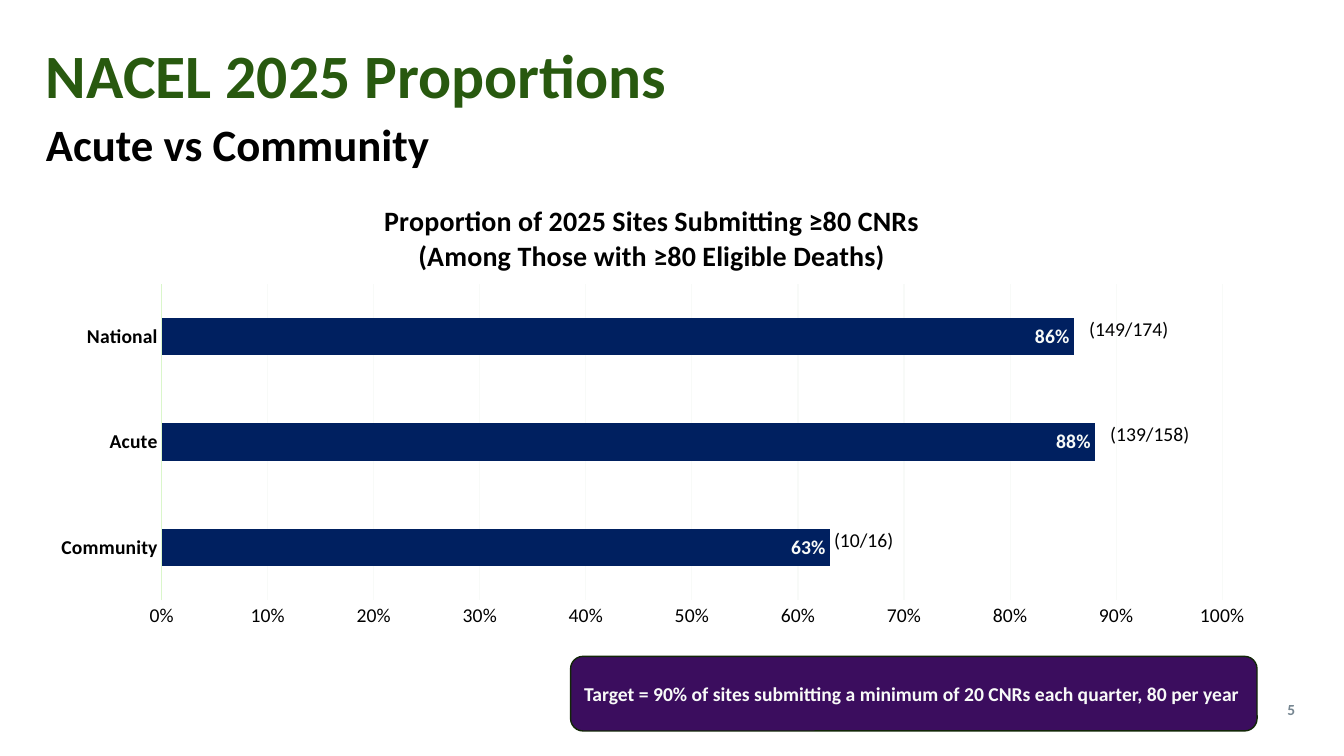
from lxml import etree
from pptx import Presentation
from pptx import util as u
from pptx.chart.data import CategoryChartData
from pptx.dml.color import RGBColor
from pptx.enum import chart as charts, shapes, text
from pptx.oxml.ns import qn

FONT = "Calibri"
COLOURS = {
    "green": "28590F",
    "black": "000000",
    "grey": "768691",
    "pale": "F8FAF8",
    "axis": "DAF6CB",
    "navy": "002060",
    "purple": "3B0D5E",
    "outline": "122707",
}
SITES = [
    ("National", 0.86, "(149/174)", 26.29),
    ("Acute", 0.88, "(139/158)", 26.82),
    ("Community", 0.63, "(10/16)", 19.86),
]


def colour(name):
    return RGBColor.from_string(COLOURS[name])


def set_font(font, size, color="black", bold=False):
    font.name = FONT
    font.size = u.Pt(size)
    font.bold = bold
    font.color.rgb = colour(color)


def write(frame, content, size, color="black", bold=False, align=text.PP_ALIGN.LEFT,
          anchor=text.MSO_ANCHOR.TOP, spacing=1.0, wrap=True):
    frame.word_wrap = wrap
    frame.vertical_anchor = anchor
    paragraph = frame.paragraphs[0]
    paragraph.alignment = align
    paragraph.line_spacing = spacing
    run = paragraph.add_run()
    run.text = content
    set_font(run.font, size, color, bold)


def add_text(slide, box, content, **style):
    shape = slide.shapes.add_textbox(*map(u.Cm, box))
    write(shape.text_frame, content, **style)


def add_heading(slide, box):
    left, top, width, height = box
    add_text(slide, (left, top, width, 2.46), "NACEL 2025 Proportions", size=44,
             color="green", bold=True, anchor=text.MSO_ANCHOR.MIDDLE, spacing=0.9)
    add_text(slide, (left, top + height - 1.32, width, 1.32), "Acute vs Community",
             size=32, bold=True, spacing=0.9)


def set_layout(element, position, **fractions):
    old = element.find(qn("c:layout"))
    if old is not None:
        element.remove(old)
    layout = etree.Element(qn("c:layout"))
    manual = etree.SubElement(layout, qn("c:manualLayout"))
    for tag, value in fractions.items():
        etree.SubElement(manual, qn("c:" + tag)).set("val", str(value))
    element.insert(position, layout)


def style_axis(axis, bold=False):
    axis.major_tick_mark = charts.XL_TICK_MARK.NONE
    axis.minor_tick_mark = charts.XL_TICK_MARK.NONE
    set_font(axis.tick_labels.font, 14, bold=bold)


def style_line(line, color):
    line.color.rgb = colour(color)
    line.width = u.Pt(0.75)


def add_title(chart):
    chart.has_title = True
    frame = chart.chart_title.text_frame
    frame.text = ("Proportion of 2025 Sites Submitting ≥80 CNRs\n"
                  "(Among Those with ≥80 Eligible Deaths)")
    for paragraph in frame.paragraphs:
        set_font(paragraph.runs[0].font, 20, bold=True)
    chart.chart_title.include_in_layout = False
    set_layout(chart.chart_title._element, 1, xMode="edge", yMode="edge", x=0.28, y=0.04)


def add_proportions(slide, box):
    data = CategoryChartData(number_format="0%")
    data.categories = [site[0] for site in reversed(SITES)]
    data.add_series("Series 1", [site[1] for site in reversed(SITES)])
    chart = slide.shapes.add_chart(charts.XL_CHART_TYPE.BAR_CLUSTERED,
                                   *map(u.Cm, box), data).chart
    set_font(chart.font, 10, "green")
    chart.has_legend = False
    add_title(chart)

    plot = chart.plots[0]
    plot.gap_width = 182
    plot.vary_by_categories = False
    series = plot.series[0]
    series.format.fill.solid()
    series.format.fill.fore_color.rgb = colour("navy")
    labels = series.data_labels
    labels.show_value = True
    labels.position = charts.XL_LABEL_POSITION.INSIDE_END
    labels.number_format = "0%"
    labels.number_format_is_linked = False
    set_font(labels.font, 14, "pale", bold=True)

    style_axis(chart.category_axis, bold=True)
    style_line(chart.category_axis.format.line, "axis")
    values = chart.value_axis
    style_axis(values)
    values.minimum_scale, values.maximum_scale, values.major_unit = 0, 1, 0.1
    values.tick_labels.number_format = "0%"
    values.tick_labels.number_format_is_linked = False
    values.format.line.fill.background()
    style_line(values.major_gridlines.format.line, "pale")
    plot_area = chart._chartSpace.chart.plotArea
    set_layout(plot_area, 0, layoutTarget="inner", xMode="edge", yMode="edge",
               x=0.102, y=0.225, w=0.861, h=0.692)

    left, top = box[:2]
    for row, (_, _, count, offset) in enumerate(SITES):
        add_text(slide, (left + offset, top + 3.28 + 2.66 * row, 2.72, 0.86), count, size=14)


def add_target(slide, box):
    shape = slide.shapes.add_shape(shapes.MSO_SHAPE.ROUNDED_RECTANGLE, *map(u.Cm, box))
    shape.shadow.inherit = False
    shape.fill.solid()
    shape.fill.fore_color.rgb = colour("purple")
    shape.line.color.rgb = colour("outline")
    shape.line.width = u.Pt(1)
    write(shape.text_frame,
          "Target = 90% of sites submitting a minimum of 20 CNRs each quarter, 80 per year",
          size=14, color="pale", bold=True, anchor=text.MSO_ANCHOR.MIDDLE)


def add_page_number(slide, box):
    add_text(slide, box, "5", size=11, color="grey", bold=True,
             align=text.PP_ALIGN.RIGHT, anchor=text.MSO_ANCHOR.MIDDLE)


def main():
    presentation = Presentation()
    presentation.slide_width = u.Cm(33.87)
    presentation.slide_height = u.Cm(19.05)
    slide = presentation.slides.add_slide(presentation.slide_layouts[6])
    add_heading(slide, (0.91, 0.74, 32, 3.55))
    add_proportions(slide, (0.91, 4.57, 31.04, 11.51))
    add_target(slide, (14.38, 16.54, 17.3, 1.88))
    add_page_number(slide, (26.9, 17.37, 5.99, 1.02))
    presentation.save("out.pptx")


if __name__ == "__main__":
    main()
